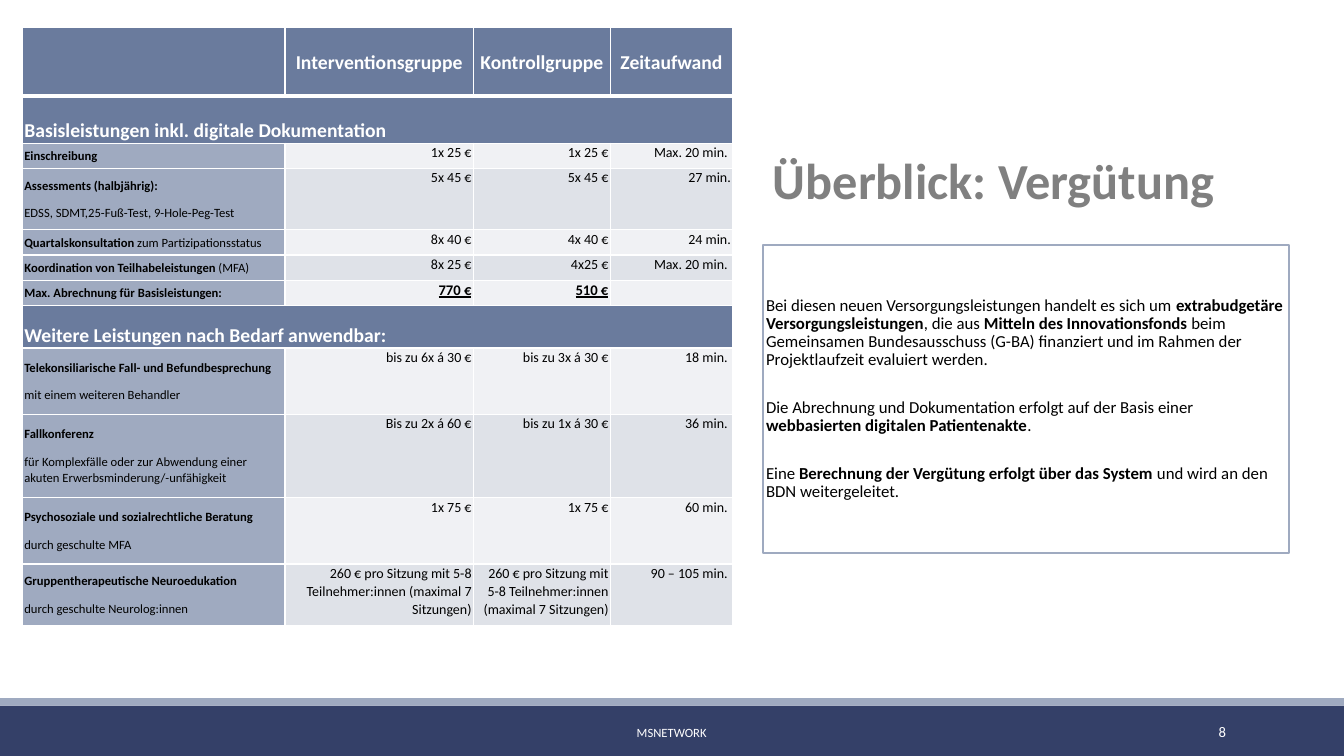
from lxml import etree
from pptx import Presentation
from pptx.dml.color import RGBColor
from pptx.enum.shapes import MSO_SHAPE
from pptx.enum.text import MSO_ANCHOR, PP_ALIGN
from pptx.oxml.ns import qn
from pptx.util import Pt

LEFT, CENTER, RIGHT = PP_ALIGN.LEFT, PP_ALIGN.CENTER, PP_ALIGN.RIGHT
TOP, MIDDLE, BOTTOM = MSO_ANCHOR.TOP, MSO_ANCHOR.MIDDLE, MSO_ANCHOR.BOTTOM
COLORS = {
    "navy": "344068", "slate": "6A7B9D", "mist": "9FAAC0", "light": "F0F1F4",
    "band": "DFE2E8", "white": "FFFFFF", "black": "000000", "gray": "808080",
}


def rgb(name):
    return RGBColor.from_string(COLORS[name])


def write(p, text, size, color="black", align=LEFT):
    """Fill a paragraph; text between asterisks is bold."""
    p.alignment = align
    for i, part in enumerate(text.split("*")):
        if part:
            r = p.add_run()
            r.text = part
            r.font.name = "Calibri"
            r.font.size = Pt(size)
            r.font.bold = i % 2 == 1
            r.font.color.rgb = rgb(color)


prs = Presentation()
prs.slide_width, prs.slide_height = Pt(960), Pt(540)
s = prs.slides.add_slide(prs.slide_layouts[6])

# Footer bars and the framed panel
for x, y, w, h, fill in [(0, 504, 960, 36, "navy"), (0, 498.7, 960, 5.3, "mist"),
                         (545, 174.8, 376, 220.2, "white")]:
    sp = s.shapes.add_shape(MSO_SHAPE.RECTANGLE, Pt(x), Pt(y), Pt(w), Pt(h))
    sp.shadow.inherit = False
    sp.fill.solid()
    sp.fill.fore_color.rgb = rgb(fill)
    sp.line.fill.background()
panel = sp
panel.line.color.rgb = rgb("mist")
panel.line.width = Pt(1.25)

# Panel text
tf = panel.text_frame
tf.word_wrap = True
tf.vertical_anchor = MIDDLE
tf.margin_left = tf.margin_right = tf.margin_top = tf.margin_bottom = Pt(2.2)
notes = [
    "Bei diesen neuen Versorgungsleistungen handelt es sich um *extrabudgetäre "
    "Versorgungsleistungen*, die aus *Mitteln des Innovationsfonds *beim Gemeinsamen "
    "Bundesausschuss (G-BA) finanziert und im Rahmen der Projektlaufzeit evaluiert werden.",
    "Die Abrechnung und Dokumentation erfolgt auf der Basis einer "
    "*webbasierten digitalen Patientenakte*.",
    "Eine *Berechnung der Vergütung erfolgt über das System* und wird an den BDN "
    "weitergeleitet.",
]
for i, note in enumerate(notes):
    p = tf.add_paragraph() if i else tf.paragraphs[0]
    p.line_spacing = 0.9
    if i:
        p.space_before = Pt(21.3)
    write(p, note, 12)

# Title, footer text and slide number
for x, y, w, h, text, size, color, align, anchor in [
    (545, 103, 376, 51, "*Überblick: Vergütung*", 36, "gray", LEFT, TOP),
    (290, 508.5, 379.5, 28.8, "MSNETWORK", 9, "white", CENTER, MIDDLE),
    (779.8, 508.5, 103, 28.8, "8", 10.5, "white", RIGHT, MIDDLE),
]:
    tf = s.shapes.add_textbox(Pt(x), Pt(y), Pt(w), Pt(h)).text_frame
    tf.word_wrap = True
    tf.vertical_anchor = anchor
    write(tf.paragraphs[0], text, size, color, align)

# Remuneration table: row height and cell texts; a single text is a section
GROUP_FEE = "260 € pro Sitzung mit 5-8 Teilnehmer:innen (maximal 7 Sitzungen)"
rows = [
    (49.2, ["", "*Interventionsgruppe*", "*Kontrollgruppe*", "*Zeitaufwand*"]),
    (33.8, ["*Basisleistungen inkl. digitale Dokumentation*"]),
    (18, ["*Einschreibung*", "1x 25 €", "1x 25 €", "Max. 20 min. "]),
    (43.9, ["*Assessments (halbjährig):*\nEDSS, SDMT,25-Fuß-Test, 9-Hole-Peg-Test",
            "5x 45 €", "5x 45 €", "27 min."]),
    (18, ["*Quartalskonsultation *zum Partizipationsstatus", "8x 40 €", "4x 40 €", "24 min."]),
    (18, ["*Koordination von Teilhabeleistungen *(MFA)", "8x 25 €", "4x25 €", "Max. 20 min. "]),
    (18, ["*Max. Abrechnung für Basisleistungen:*", "*770 €*", "*510 €*", ""]),
    (30.4, ["*Weitere Leistungen nach Bedarf anwendbar:*"]),
    (47.4, ["*Telekonsiliarische Fall- und Befundbesprechung*\nmit einem weiteren Behandler",
            "bis zu 6x á 30 €", "bis zu 3x á 30 €", "18 min. "]),
    (59.6, ["*Fallkonferenz*\nfür Komplexfälle oder zur Abwendung einer akuten "
            "Erwerbsminderung/-unfähigkeit", "Bis zu 2x á 60 €", "bis zu 1x á 30 €", "36 min. "]),
    (47.4, ["*Psychosoziale und sozialrechtliche Beratung*\ndurch geschulte MFA",
            "1x 75 €", "1x 75 €", "60 min. "]),
    (43.9, ["*Gruppentherapeutische Neuroedukation*\ndurch geschulte Neurolog:innen",
            GROUP_FEE, GROUP_FEE, "90 – 105 min. "]),
]
widths = [187.6, 134.6, 97.8, 87.4]
table = s.shapes.add_table(len(rows), len(widths), Pt(16), Pt(19.3), Pt(sum(widths)),
                           Pt(sum(height for height, _ in rows))).table
for col, width in zip(table.columns, widths):
    col.width = Pt(width)

for i, (height, texts) in enumerate(rows):
    table.rows[i].height = Pt(height)
    section = len(texts) == 1
    for j in range(len(widths)):
        cell = table.cell(i, j)
        # Role of the cell decides its look
        if i == 0:
            fill, size, color, align, anchor = "slate", 14, "white", CENTER, MIDDLE
        elif section:
            fill, size, color, align, anchor = "slate", 14, "white", LEFT, BOTTOM
        elif j == 0:
            fill, size, color, align, anchor = "mist", 9, "black", LEFT, MIDDLE
        else:
            fill = "band" if i % 2 else "light"
            size, color, align, anchor = 10, "black", RIGHT, TOP
        text = texts[j] if j < len(texts) else ""
        total = not section and i > 0 and j > 0 and text.startswith("*")
        if total:
            size = 10.5
        cell.margin_left = cell.margin_right = Pt(1.4)
        cell.margin_top = cell.margin_bottom = 0
        cell.vertical_anchor = anchor

        # White borders, heavier below the header row
        tc_pr = cell._tc.get_or_add_tcPr()
        for side in "LRTB":
            heavy = (i == 0 and side == "B") or (i == 1 and side == "T")
            ln = etree.SubElement(tc_pr, qn("a:ln" + side), w=str(Pt(3 if heavy else 1)))
            solid = etree.SubElement(ln, qn("a:solidFill"))
            etree.SubElement(solid, qn("a:srgbClr"), val=COLORS["white"])
        cell.fill.solid()
        cell.fill.fore_color.rgb = rgb(fill)

        for k, line in enumerate(text.split("\n")):
            p = cell.text_frame.add_paragraph() if k else cell.text_frame.paragraphs[0]
            p.line_spacing = 1.07
            p.space_after = Pt(0 if section else 8)
            write(p, line, size, color, align)
            for r in p.runs:
                r.font.underline = total
            if not line:
                etree.SubElement(p._p, qn("a:endParaRPr"), sz=str(size * 100))
    if section:
        table.cell(i, 0).merge(table.cell(i, len(widths) - 1))

prs.save("out.pptx")
